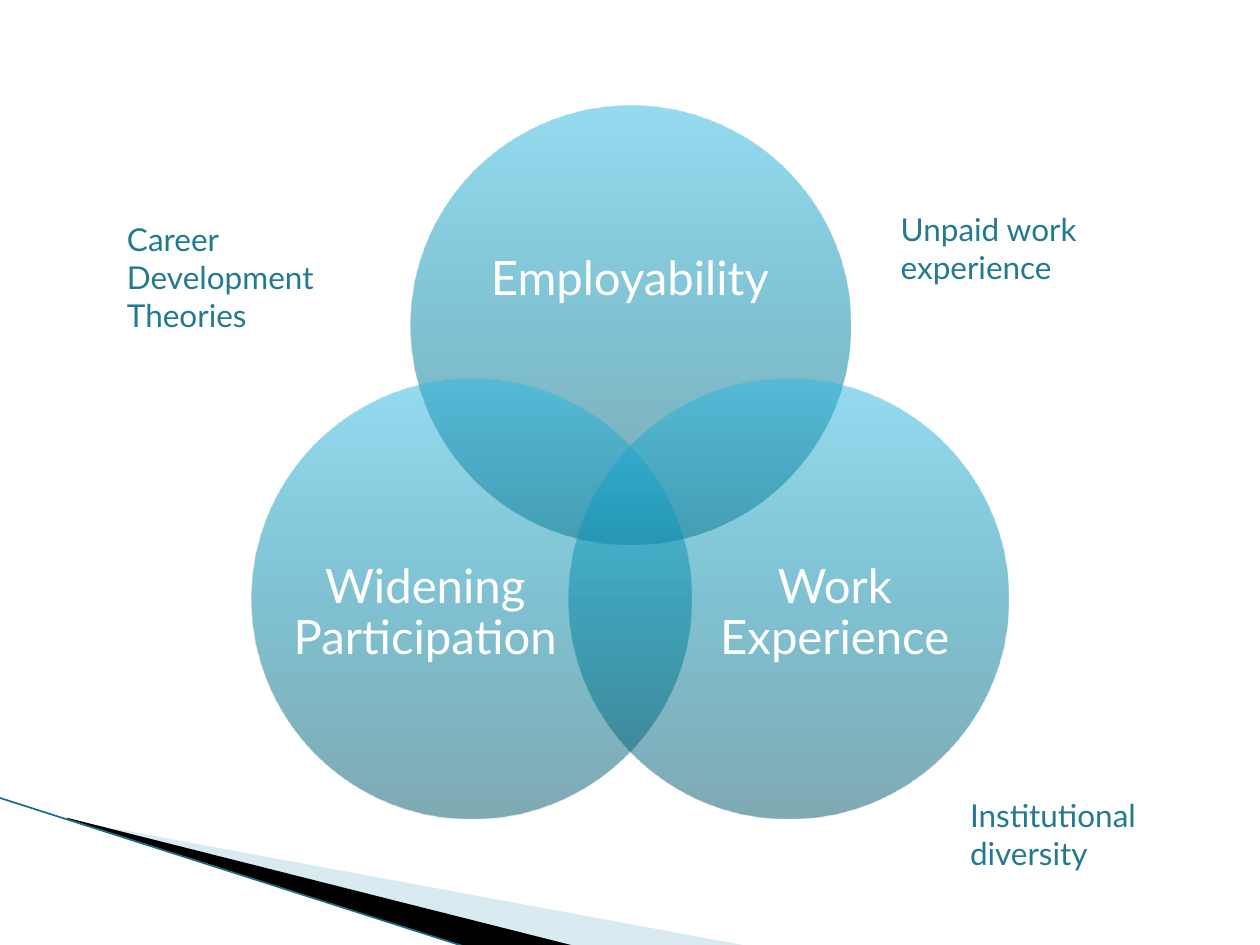
from dataclasses import dataclass
from math import cos, radians, sin
from typing import Any

from lxml.etree import SubElement
from pptx import Presentation
from pptx.dml.color import RGBColor
from pptx.enum.shapes import MSO_CONNECTOR, MSO_SHAPE
from pptx.enum.text import MSO_ANCHOR, PP_ALIGN
from pptx.oxml.ns import qn
from pptx.util import Inches, Pt

WHITE = RGBColor(0xFF, 0xFF, 0xFF)
BLACK = RGBColor(0x00, 0x00, 0x00)
TEAL = RGBColor(0x22, 0x7A, 0x8F)
LINE_TEAL = RGBColor(0x1A, 0x6E, 0x84)
PALE_BLUE = RGBColor(0xA0, 0xCB, 0xDC)
CIRCLE_STOPS = [
    (0, RGBColor(0x00, 0x53, 0x67)),
    (50, RGBColor(0x00, 0x86, 0xA7)),
    (70, RGBColor(0x0E, 0x9A, 0xBE)),
    (100, RGBColor(0x2C, 0xB9, 0xE3)),
]
COLUMNS, ROWS = 100, 75
CENTER, ORBIT, DIAMETER = (50, 40.3), 14.5, 34.9


@dataclass
class VennSlide:
    slide: Any
    width: int
    height: int
    font_name: str = "Lato"

    def x(self, columns):
        return round(self.width * columns / COLUMNS)

    def y(self, rows):
        return round(self.height * rows / ROWS)

    def box(self, left, top, width, height):
        return self.x(left), self.y(top), self.x(width), self.y(height)

    def wedge(self, points, color, opacity=100):
        corners = [(self.x(column), self.y(row)) for column, row in points]
        builder = self.slide.shapes.build_freeform(*corners[0])
        builder.add_line_segments(corners[1:], close=True)
        shape = builder.convert_to_shape()
        shape.shadow.inherit = False
        shape.fill.solid()
        shape.fill.fore_color.rgb = color
        shape.line.fill.background()
        if opacity < 100:
            color_element = next(shape._element.spPr.iter(qn("a:srgbClr")))
            SubElement(color_element, qn("a:alpha"), val=str(opacity * 1000))

    def edge(self, start, end, color, weight):
        connector = self.slide.shapes.add_connector(
            MSO_CONNECTOR.STRAIGHT,
            self.x(start[0]), self.y(start[1]), self.x(end[0]), self.y(end[1]),
        )
        connector.line.color.rgb = color
        connector.line.width = Pt(weight)
        SubElement(connector._element.spPr, qn("a:effectLst"))

    def circle(self, angle):
        left = CENTER[0] + ORBIT * cos(radians(angle)) - DIAMETER / 2
        top = CENTER[1] + ORBIT * sin(radians(angle)) - DIAMETER / 2
        shape = self.slide.shapes.add_shape(
            MSO_SHAPE.OVAL, *self.box(left, top, DIAMETER, DIAMETER)
        )
        shape.shadow.inherit = False
        shape.line.fill.background()
        shape.fill.gradient()
        gradient = shape._element.spPr.find(qn("a:gradFill"))
        for child in list(gradient):
            gradient.remove(child)
        stop_list = SubElement(gradient, qn("a:gsLst"))
        for position, color in CIRCLE_STOPS:
            stop = SubElement(stop_list, qn("a:gs"), pos=str(position * 1000))
            color_element = SubElement(stop, qn("a:srgbClr"), val=str(color))
            SubElement(color_element, qn("a:alpha"), val="50000")
        SubElement(gradient, qn("a:lin"), ang="16200000", scaled="0")

    def text(self, words, area, size, color):
        text_box = self.slide.shapes.add_textbox(*self.box(*area))
        frame = text_box.text_frame
        frame.word_wrap = True
        paragraph = frame.paragraphs[0]
        run = paragraph.add_run()
        run.text = words
        run.font.name = self.font_name
        run.font.size = Pt(size)
        run.font.color.rgb = color
        return frame

    def circle_label(self, words, area):
        frame = self.text(words, area, 27, WHITE)
        frame.margin_left = frame.margin_right = 0
        frame.margin_top = frame.margin_bottom = 0
        frame.vertical_anchor = MSO_ANCHOR.MIDDLE
        frame.paragraphs[0].alignment = PP_ALIGN.CENTER
        frame.paragraphs[0].line_spacing = 0.9

    def side_label(self, words, area):
        self.text(words, area, 18, TEAL)


def main():
    presentation = Presentation()
    presentation.slide_width = Inches(10)
    presentation.slide_height = Inches(7.5)
    slide = presentation.slides.add_slide(presentation.slide_layouts[6])
    venn = VennSlide(slide, presentation.slide_width, presentation.slide_height)

    venn.wedge([(5.5, 65.1), (59.5, 75.1), (45.6, 75.1), (5.5, 65)], PALE_BLUE, 40)
    venn.wedge([(5.3, 64.9), (45.7, 75.1), (37.2, 75.2), (5.4, 65)], BLACK)
    venn.edge((-0.1, 63.3), (37.1, 75.2), LINE_TEAL, 0.95)

    for angle, words, area in [
        (-90, "Employability", (37.2, 14.4, 25.6, 15.7)),
        (30, "Work Experience", (55.8, 39.1, 20.9, 19.2)),
        (150, "Widening Participation", (23.3, 39.1, 20.9, 19.2)),
    ]:
        venn.circle(angle)
        venn.circle_label(words, area)

    for words, area in [
        ("Career Development Theories", (9.1, 17, 19.7, 10.1)),
        ("Unpaid work experience", (70.5, 16.2, 19.7, 7.1)),
        ("Institutional diversity", (76, 62.7, 18.1, 7.1)),
    ]:
        venn.side_label(words, area)

    presentation.save("out.pptx")


if __name__ == "__main__":
    main()
